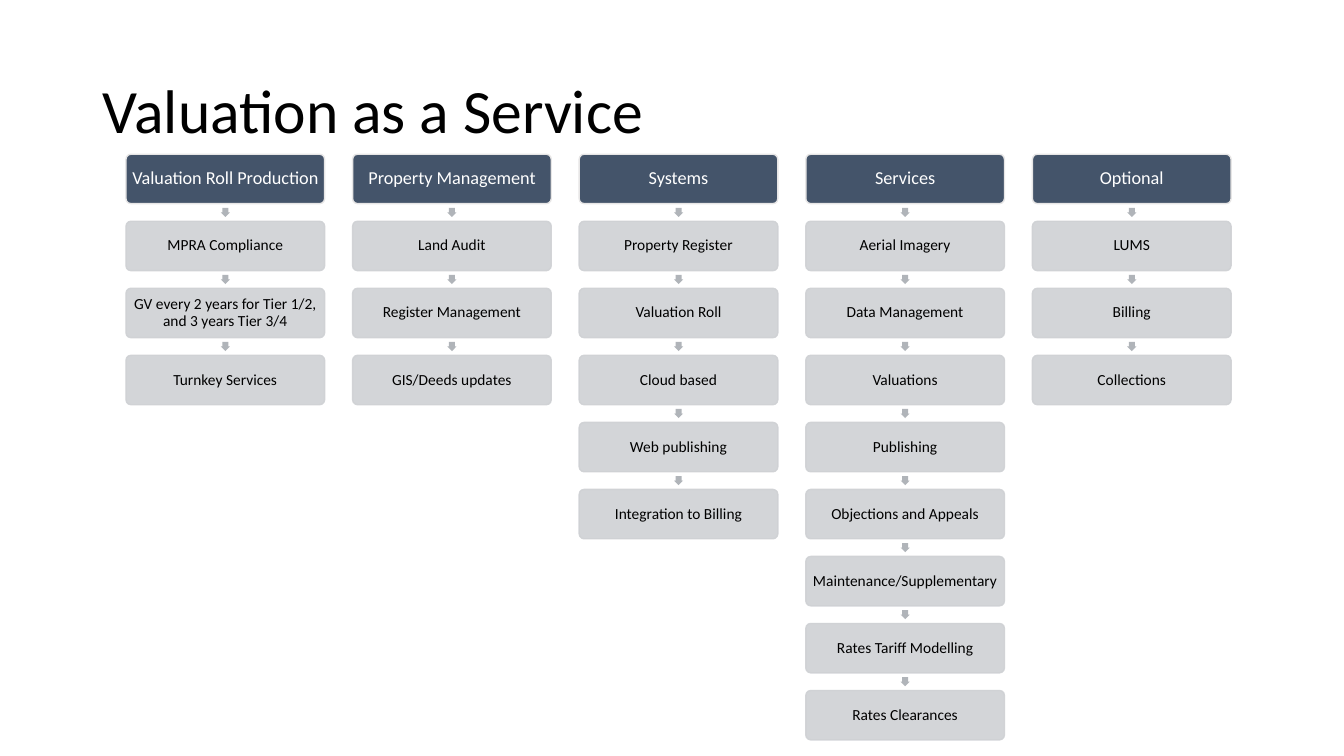
from pptx import Presentation
from pptx.dml.color import RGBColor
from pptx.enum import shapes, text
from pptx.oxml.ns import qn
from pptx.util import Inches, Pt
from lxml import etree

# Content
TITLE = "Valuation as a Service"
COLUMNS = [
    ("Valuation Roll Production",
     ["MPRA Compliance", "GV every 2 years for Tier 1/2, and 3 years Tier 3/4",
      "Turnkey Services"]),
    ("Property Management",
     ["Land Audit", "Register Management", "GIS/Deeds updates"]),
    ("Systems",
     ["Property Register", "Valuation Roll", "Cloud based", "Web publishing",
      "Integration to Billing"]),
    ("Services",
     ["Aerial Imagery", "Data Management", "Valuations", "Publishing",
      "Objections and Appeals", "Maintenance/Supplementary",
      "Rates Tariff Modelling", "Rates Clearances"]),
    ("Optional", ["LUMS", "Billing", "Collections"]),
]

# Style
COLORS = {"header": "44546A", "header_line": "E7E6E6", "item": "CFD1D4",
          "arrow": "B0B4B9", "black": "000000", "white": "FFFFFF"}
FONT = "Calibri"

# Grid, in inches
LEFT, LAST_LEFT = 1.25, 10.24
TOP, LAST_TOP = 1.53, 6.85
BOX_WIDTH, BOX_HEIGHT = 1.97, 0.49
ARROW = 0.09
COLUMN_STEP = (LAST_LEFT - LEFT) / (len(COLUMNS) - 1)
ROW_STEP = (LAST_TOP - TOP) / max(len(items) for _, items in COLUMNS)


def color(name):
    return RGBColor.from_string(COLORS[name])


def write(frame, words, size, ink, align):
    frame.word_wrap = True
    frame.vertical_anchor = text.MSO_ANCHOR.MIDDLE
    para = frame.paragraphs[0]
    para.alignment = align
    para.line_spacing = 0.9
    span = para.add_run()
    span.text = words
    span.font.name = FONT
    span.font.size = Pt(size)
    span.font.color.rgb = color(ink)


def add_shape(page, kind, left, top, width, height, fill):
    shape = page.shapes.add_shape(kind, Inches(left), Inches(top),
                                  Inches(width), Inches(height))
    shape.shadow.inherit = False
    shape.fill.solid()
    shape.fill.fore_color.rgb = color(fill)
    return shape


def add_box(page, words, left, top, fill, line, ink, size, opacity=100):
    box = add_shape(page, shapes.MSO_SHAPE.ROUNDED_RECTANGLE, left, top,
                    BOX_WIDTH, BOX_HEIGHT, fill)
    box.adjustments[0] = 0.1
    box.line.color.rgb = color(line)
    box.line.width = Pt(1)
    if opacity < 100:
        for tint in box.element.spPr.iter(qn("a:srgbClr")):
            etree.SubElement(tint, qn("a:alpha")).set("val", str(opacity * 1000))
    frame = box.text_frame
    frame.margin_left = frame.margin_right = Inches(0.02)
    frame.margin_top = frame.margin_bottom = Inches(0.02)
    write(frame, words, size, ink, text.PP_ALIGN.CENTER)


def add_arrow(page, left, top):
    arrow = add_shape(page, shapes.MSO_SHAPE.RIGHT_ARROW, left, top,
                      ARROW, ARROW, "arrow")
    arrow.rotation = 90
    arrow.adjustments[0] = 0.667
    arrow.line.fill.background()


def main():
    deck = Presentation()
    deck.slide_width, deck.slide_height = Inches(13.33), Inches(7.5)
    page = deck.slides.add_slide(deck.slide_layouts[5])

    # Title
    title = page.shapes.title
    title.left, title.top = Inches(0.92), Inches(0.4)
    title.width, title.height = Inches(11.5), Inches(1.45)
    write(title.text_frame, TITLE, 44, "black", text.PP_ALIGN.LEFT)

    # Columns: a header, then an arrow and a box for each item
    for column, (header, items) in enumerate(COLUMNS):
        left = LEFT + column * COLUMN_STEP
        add_box(page, header, left, TOP, "header", "header_line", "white", 13)
        for row, item in enumerate(items, start=1):
            top = TOP + row * ROW_STEP
            gap_middle = top - (ROW_STEP - BOX_HEIGHT) / 2
            add_arrow(page, left + (BOX_WIDTH - ARROW) / 2, gap_middle - ARROW / 2)
            add_box(page, item, left, top, "item", "item", "black", 11, opacity=90)

    deck.save("out.pptx")


if __name__ == "__main__":
    main()
